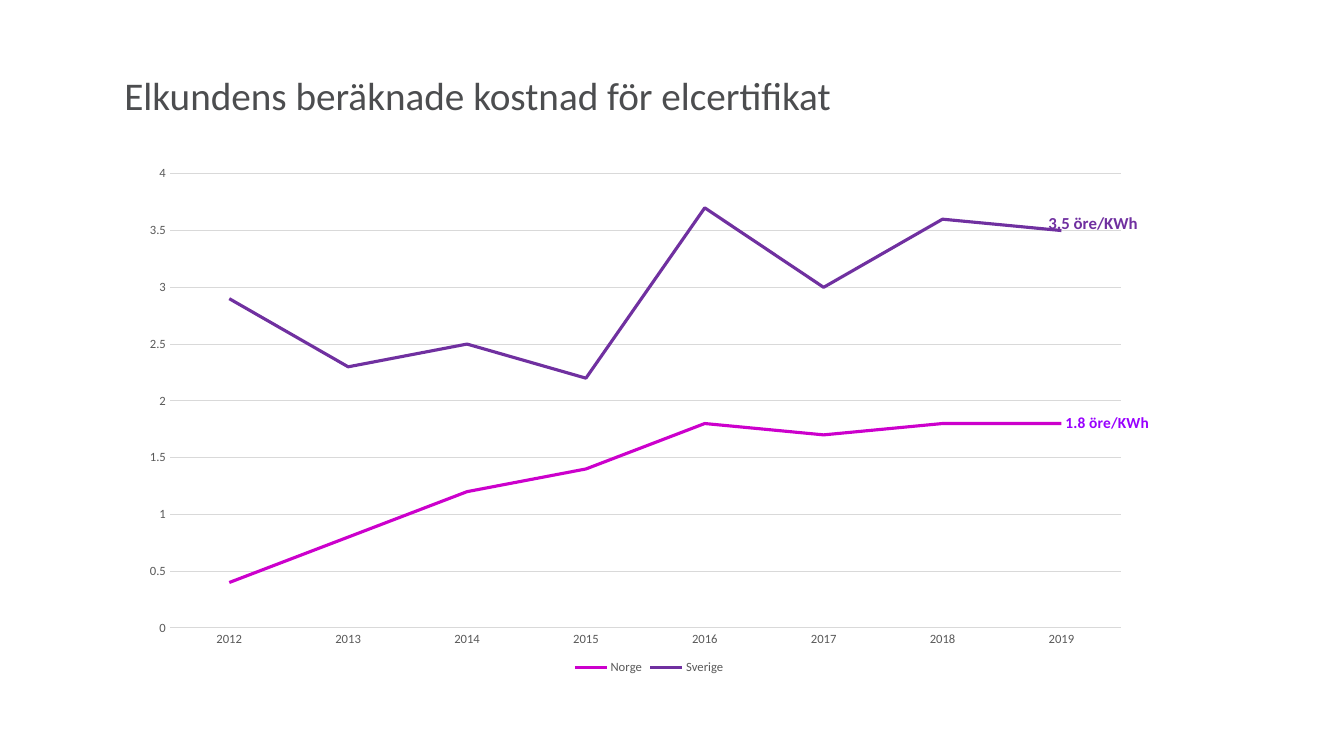
from lxml import etree
from pptx import Presentation
from pptx.chart.data import CategoryChartData
from pptx.dml.color import RGBColor
from pptx.enum.chart import (XL_CHART_TYPE, XL_LABEL_POSITION,
                             XL_LEGEND_POSITION, XL_TICK_MARK)
from pptx.enum.text import MSO_ANCHOR, PP_ALIGN
from pptx.oxml.ns import qn
from pptx.util import Inches, Pt

LINE_CHART = XL_CHART_TYPE.LINE
LABEL_RIGHT = XL_LABEL_POSITION.RIGHT
LEGEND_BOTTOM = XL_LEGEND_POSITION.BOTTOM
NO_TICK = XL_TICK_MARK.NONE
TOP = MSO_ANCHOR.TOP
LEFT = PP_ALIGN.LEFT

TITLE_GREY = RGBColor(0x4C, 0x4D, 0x4F)
AXIS_GREY = RGBColor(0x59, 0x59, 0x59)
GRID_GREY = RGBColor(0xD9, 0xD9, 0xD9)
BLACK = RGBColor(0x00, 0x00, 0x00)
MAGENTA = RGBColor(0xCC, 0x00, 0xCC)
PURPLE = RGBColor(0x70, 0x30, 0xA0)
VIOLET = RGBColor(0x99, 0x00, 0xFF)

WIDTH, HEIGHT = Inches(13.33), Inches(7.5)
TITLE_ONLY = 5

YEARS = [str(year) for year in range(2012, 2020)]
# name, values, line colour, end label, label colour, label size, label shift
COSTS = [
    ("Norge", (0.4, 0.8, 1.2, 1.4, 1.8, 1.7, 1.8, 1.8),
     MAGENTA, "1.8 öre/KWh", VIOLET, 11, None),
    ("Sverige", (2.9, 2.3, 2.5, 2.2, 3.7, 3.0, 3.6, 3.5),
     PURPLE, "3.5 öre/KWh", PURPLE, 12, {"x": -0.016, "y": -0.014}),
]


def manual_layout(**settings):
    """Build a chart layout element from its settings, in schema order."""
    layout = etree.Element(qn("c:layout"))
    manual = etree.SubElement(layout, qn("c:manualLayout"))
    for name, value in settings.items():
        etree.SubElement(manual, qn("c:" + name)).set("val", str(value))
    return layout


class CostSlide:
    font_name = "Calibri"

    def __init__(self, presentation):
        self.slide = presentation.slides.add_slide(
            presentation.slide_layouts[TITLE_ONLY])

    def box(self, left, top, width, height):
        """Turn shares of the slide's size into lengths."""
        return (int(WIDTH * left), int(HEIGHT * top),
                int(WIDTH * width), int(HEIGHT * height))

    def style(self, font, size, color, bold=False):
        font.name = self.font_name
        font.size = Pt(size)
        font.bold = bold
        font.color.rgb = color

    def title(self, text, *shares):
        shape = self.slide.shapes.title
        shape.left, shape.top, shape.width, shape.height = self.box(*shares)
        frame = shape.text_frame
        frame.word_wrap = True
        frame.vertical_anchor = TOP
        paragraph = frame.paragraphs[0]
        paragraph.alignment = LEFT
        run = paragraph.add_run()
        run.text = text
        self.style(run.font, 28, TITLE_GREY)

    def line_chart(self, *shares):
        data = CategoryChartData(number_format="General")
        data.categories = YEARS
        for name, values, *_ in COSTS:
            data.add_series(name, values)
        chart = self.slide.shapes.add_chart(
            LINE_CHART, *self.box(*shares), data).chart
        chart.has_title = False
        self.style(chart.font, 10, BLACK)
        self.axes(chart)
        self.legend(chart)
        for series, (_, _, color, *label) in zip(chart.plots[0].series, COSTS):
            series.smooth = False
            series.format.line.color.rgb = color
            series.format.line.width = Pt(2.25)
            self.end_label(series, *label)
        # Fixed inner plot area
        plot_area = chart.plots[0]._element.getparent()
        for old in plot_area.findall(qn("c:layout")):
            plot_area.remove(old)
        plot_area.insert(0, manual_layout(
            layoutTarget="inner", xMode="edge", yMode="edge",
            x=0.052, y=0.036, w=0.889, h=0.867))

    def axes(self, chart):
        for axis in (chart.category_axis, chart.value_axis):
            axis.major_tick_mark = axis.minor_tick_mark = NO_TICK
            self.style(axis.tick_labels.font, 9, AXIS_GREY)
        value_axis = chart.value_axis
        value_axis.minimum_scale, value_axis.maximum_scale = 0, 4
        value_axis.major_unit = 0.5
        value_axis.format.line.fill.background()
        for line in (chart.category_axis.format.line,
                     value_axis.major_gridlines.format.line):
            line.color.rgb = GRID_GREY
            line.width = Pt(0.75)

    def legend(self, chart):
        chart.has_legend = True
        chart.legend.position = LEGEND_BOTTOM
        chart.legend.include_in_layout = False
        self.style(chart.legend.font, 9, AXIS_GREY)

    def end_label(self, series, text, color, size, shift):
        label = series.points[len(YEARS) - 1].data_label
        run = label.text_frame.paragraphs[0].add_run()
        run.text = text
        self.style(run.font, size, color, bold=True)
        label.position = LABEL_RIGHT
        if shift:
            element = series._element.find(".//" + qn("c:dLbl"))
            for old in element.findall(qn("c:layout")):
                element.remove(old)
            element.insert(1, manual_layout(**shift))


def main():
    presentation = Presentation()
    presentation.slide_width, presentation.slide_height = WIDTH, HEIGHT
    cost_slide = CostSlide(presentation)
    # Heading
    cost_slide.title("Elkundens beräknade kostnad för elcertifikat",
                     0.085, 0.087, 0.845, 0.12)
    # Cost per year in both countries
    cost_slide.line_chart(0.085, 0.205, 0.796, 0.693)
    presentation.save("out.pptx")


if __name__ == "__main__":
    main()
